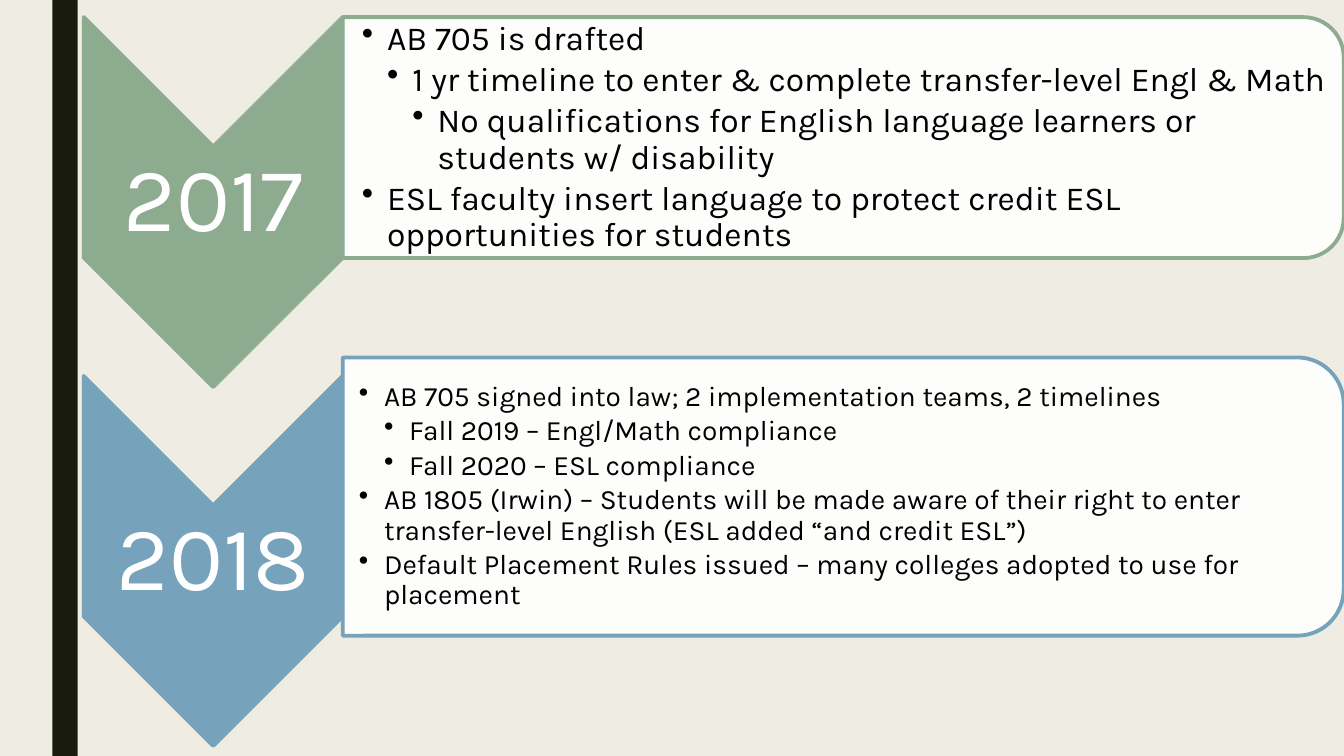
import pptx
import pptx.dml.color
import pptx.enum.shapes
import pptx.enum.text
import pptx.oxml.ns
import pptx.util
from lxml import etree

RGBColor = pptx.dml.color.RGBColor
SHAPES = pptx.enum.shapes.MSO_SHAPE
ALIGN = pptx.enum.text.PP_ALIGN

SAND = RGBColor(0xEF, 0xED, 0xE3)
INK = RGBColor(0x19, 0x1B, 0x0E)
GREEN = RGBColor(0x8D, 0xAB, 0x8E)
BLUE = RGBColor(0x77, 0xA2, 0xBB)
WHITE = RGBColor(0xFF, 0xFF, 0xFF)
BLACK = RGBColor(0, 0, 0)

CHEVRON_LEFT, CHEVRON_WIDTH, CHEVRON_HEIGHT = 2.49, 7.71, 11.01
LABEL_HEIGHT = 3.3
PANEL_LEFT, PANEL_WIDTH = 10.2, 29.79
CORNER_INSET = 0.0488

YEARS = [
    {
        "year": "2017", "color": GREEN, "chevron_top": 0.51,
        "panel_top": 0.51, "panel_height": 7.17, "size": 24, "insets": (0.19, 0.02),
        "points": [
            (0, "AB 705 is drafted"),
            (1, "1 yr timeline to enter & complete transfer-level Engl & Math"),
            (2, "No qualifications for English language learners or students w/ disability"),
            (0, "ESL faculty insert language to protect credit ESL opportunities for students"),
        ],
    },
    {
        "year": "2018", "color": BLUE, "chevron_top": 11.19,
        "panel_top": 10.64, "panel_height": 8.28, "size": 20, "insets": (0.16, 0.01),
        "points": [
            (0, "AB 705 signed into law; 2 implementation teams, 2 timelines"),
            (1, "Fall 2019 – Engl/Math compliance"),
            (1, "Fall 2020 – ESL compliance"),
            (0, "AB 1805 (Irwin) – Students will be made aware of their right to enter "
                "transfer-level English (ESL added “and credit ESL”)"),
            (0, "Default Placement Rules issued – many colleges adopted to use for placement"),
        ],
    },
]


class TimelineSlide:
    """Draws timeline elements on a grid of 40 columns by 22.5 rows."""

    font = "Karla"
    columns, rows = 40, 22.5
    indent = pptx.util.Inches(0.25)

    def __init__(self, presentation):
        self.column = presentation.slide_width / self.columns
        self.row = presentation.slide_height / self.rows
        self.slide = presentation.slides.add_slide(presentation.slide_layouts[6])
        self.slide.background.fill.solid()
        self.slide.background.fill.fore_color.rgb = SAND

    def box(self, left, top, width, height):
        return (round(left * self.column), round(top * self.row),
                round(width * self.column), round(height * self.row))

    def add_block(self, kind, area, fill, line=None, turned=False, opacity=None):
        left, top, width, height = self.box(*area)
        if turned:
            left, top = left + (width - height) // 2, top + (height - width) // 2
            width, height = height, width
        shape = self.slide.shapes.add_shape(kind, left, top, width, height)
        shape.rotation = 90 if turned else 0
        shape.shadow.inherit = False
        shape.fill.solid()
        shape.fill.fore_color.rgb = fill
        if line is None:
            shape.line.fill.background()
        else:
            shape.line.color.rgb = line
            shape.line.width = pptx.util.Pt(2.75)
        if opacity is not None:
            color = shape.element.spPr.find(
                "/".join(map(pptx.oxml.ns.qn, ("a:solidFill", "a:srgbClr"))))
            etree.SubElement(color, pptx.oxml.ns.qn("a:alpha"), val=str(opacity * 1000))

    def add_text_frame(self, area, left_inset, inset):
        frame = self.slide.shapes.add_textbox(*self.box(*area)).text_frame
        frame.word_wrap = True
        frame.vertical_anchor = pptx.enum.text.MSO_ANCHOR.MIDDLE
        frame.margin_left = pptx.util.Inches(left_inset)
        frame.margin_top = frame.margin_right = frame.margin_bottom = pptx.util.Inches(inset)
        return frame

    def add_run(self, paragraph, text, size, color):
        paragraph.line_spacing = 0.9
        run = paragraph.add_run()
        run.text = text
        run.font.name = self.font
        run.font.size = pptx.util.Pt(size)
        run.font.color.rgb = color

    def add_label(self, area, text):
        paragraph = self.add_text_frame(area, 0.05, 0.05).paragraphs[0]
        paragraph.alignment = ALIGN.CENTER
        self.add_run(paragraph, text, 65, WHITE)

    def add_bullets(self, area, insets, points, size):
        frame = self.add_text_frame(area, *insets)
        for index, (level, text) in enumerate(points):
            paragraph = frame.add_paragraph() if index else frame.paragraphs[0]
            paragraph.level = level
            paragraph.alignment = ALIGN.LEFT
            paragraph.space_after = pptx.util.Pt(0.15 * size)
            self.add_run(paragraph, text, size, BLACK)
            properties = paragraph._p.get_or_add_pPr()
            properties.set("marL", str(self.indent * (level + 1)))
            properties.set("indent", str(-self.indent))
            etree.SubElement(properties, pptx.oxml.ns.qn("a:buChar"), char="•")

    def add_year(self, year, color, chevron_top, panel_top, panel_height, size, insets, points):
        self.add_block(SHAPES.CHEVRON, (CHEVRON_LEFT, chevron_top, CHEVRON_WIDTH, CHEVRON_HEIGHT),
                       color, color, turned=True)
        label_top = chevron_top + (CHEVRON_HEIGHT - LABEL_HEIGHT) / 2
        self.add_label((CHEVRON_LEFT, label_top, CHEVRON_WIDTH, LABEL_HEIGHT), year)
        self.add_block(SHAPES.ROUND_2_SAME_RECTANGLE,
                       (PANEL_LEFT, panel_top, PANEL_WIDTH, panel_height),
                       WHITE, color, turned=True, opacity=90)
        trim = panel_height * CORNER_INSET
        self.add_bullets((PANEL_LEFT, panel_top + trim, PANEL_WIDTH - trim,
                          panel_height - 2 * trim), insets, points, size)


def main():
    presentation = pptx.Presentation()
    presentation.slide_width = pptx.util.Inches(13.33)
    presentation.slide_height = pptx.util.Inches(7.5)
    timeline = TimelineSlide(presentation)
    timeline.add_block(SHAPES.RECTANGLE, (1.56, 0, 0.75, timeline.rows), INK)
    for entry in YEARS:
        timeline.add_year(**entry)
    presentation.save("out.pptx")


if __name__ == "__main__":
    main()
